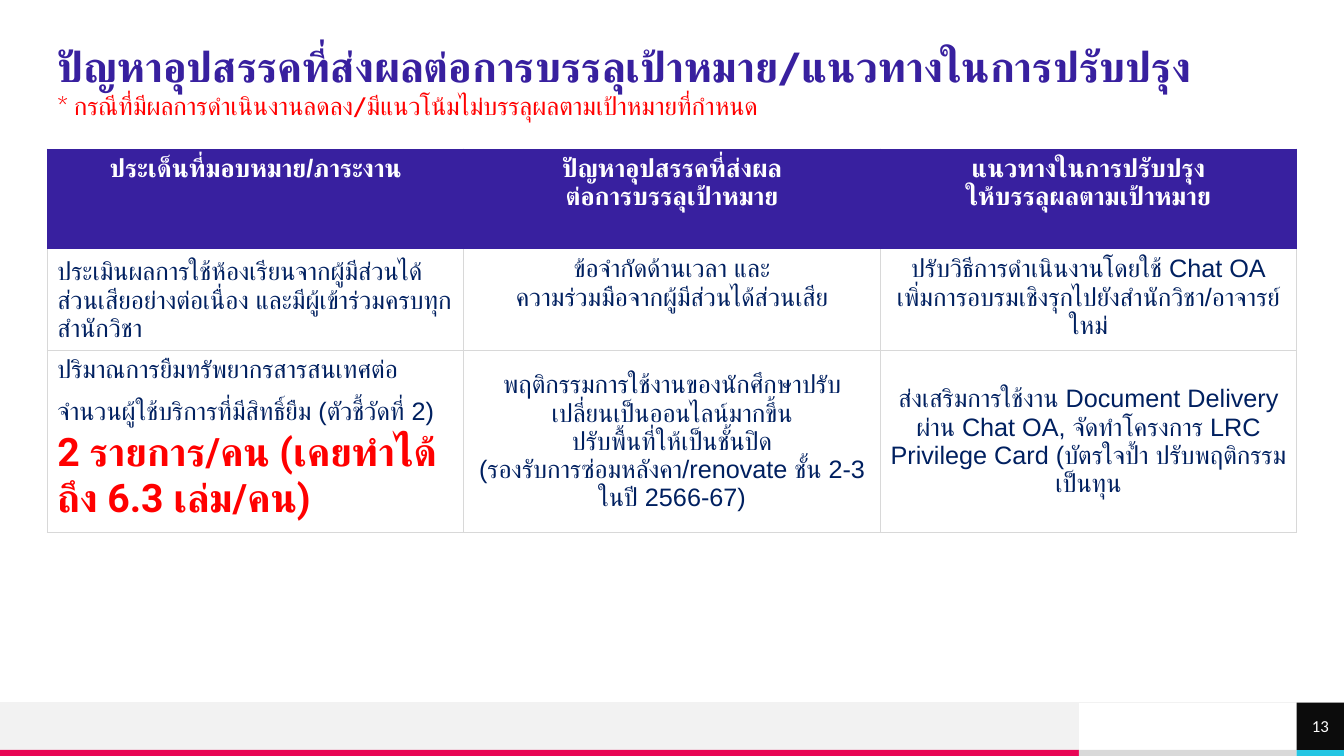
from pptx import Presentation
from pptx.dml.color import RGBColor
from pptx.enum.shapes import MSO_CONNECTOR, MSO_SHAPE
from pptx.enum.text import MSO_ANCHOR, PP_ALIGN
from pptx.oxml.ns import qn
from pptx.util import Inches, Pt
from lxml.etree import SubElement

COLORS = {
    "purple": "38209F", "navy": "002060", "red": "FF0000", "white": "FFFFFF",
    "border": "D8D8D8", "footer": "F2F2F2", "strip": "D9D9D9", "pink": "E80554",
    "cyan": "25C6E3", "black": "0C0C0C",
}
MARGIN, FOOTER_TOP, STRIP_TOP = 0.47, 6.97, 7.44
FOOTER_W, NUMBER_LEFT, SLIDE_W = 10.7, 12.86, 13.33

HEADERS = [
    ["ประเด็นที่มอบหมาย/ภาระงาน"],
    ["ปัญหาอุปสรรคที่ส่งผล", "ต่อการบรรลุเป้าหมาย"],
    ["แนวทางในการปรับปรุง", "ให้บรรลุผลตามเป้าหมาย"],
]
ROWS = [
    [
        ["ประเมินผลการใช้ห้องเรียนจากผู้มีส่วนได้ส่วนเสียอย่างต่อเนื่อง และมีผู้เข้าร่วมครบทุกสำนักวิชา"],
        ["ข้อจำกัดด้านเวลา และ", "ความร่วมมือจากผู้มีส่วนได้ส่วนเสีย"],
        ["ปรับวิธีการดำเนินงานโดยใช้ Chat OA", "เพิ่มการอบรมเชิงรุกไปยังสำนักวิชา/อาจารย์ใหม่"],
    ],
    [
        ["ปริมาณการยืมทรัพยากรสารสนเทศต่อจำนวนผู้ใช้บริการที่มีสิทธิ์ยืม (ตัวชี้วัดที่ 2)"],
        ["พฤติกรรมการใช้งานของนักศึกษาปรับเปลี่ยนเป็นออนไลน์มากขึ้น", "ปรับพื้นที่ให้เป็นชั้นปิด",
         "(รองรับการซ่อมหลังคา/renovate ชั้น 2-3 ในปี 2566-67)"],
        ["ส่งเสริมการใช้งาน Document Delivery ผ่าน Chat OA, จัดทำโครงการ LRC Privilege Card "
         "(บัตรใจป้ำ ปรับพฤติกรรมเป็นทุน"],
    ],
]
LOAN_RESULT = " 2 รายการ/คน (เคยทำได้ถึง 6.3 เล่ม/คน)"
TOP_ANCHORED = {(1, 1), (1, 2), (2, 0)}
ROW_SIDES = ["LRTB", "LRB", "LRTB"]


def rgb(name):
    return RGBColor.from_string(COLORS[name])


def add_run(p, text, size=18, font="Arial", color="navy", bold=False):
    """Add a run with the same font for Latin and Thai script."""
    r = p.add_run()
    r.text = text
    r.font.size = Pt(size)
    r.font.name = font
    r.font.bold = bold
    r.font.color.rgb = rgb(color)
    SubElement(r.font._element, qn("a:cs"), typeface=font)


def set_borders(cell, sides, color):
    for side in sides:
        ln = SubElement(cell._tc.get_or_add_tcPr(), qn(f"a:ln{side}"), w=str(Pt(1)))
        fill = SubElement(ln, qn("a:solidFill"))
        SubElement(fill, qn("a:srgbClr"), val=COLORS[color])


class SlideBuilder:
    def __init__(self, prs):
        self.slide = prs.slides.add_slide(prs.slide_layouts[5])
        self.shapes = self.slide.shapes

    def rect(self, left, top, width, height, color):
        sp = self.shapes.add_shape(MSO_SHAPE.RECTANGLE, Inches(left), Inches(top),
                                   Inches(width), Inches(height))
        sp.shadow.inherit = False
        sp.fill.solid()
        sp.fill.fore_color.rgb = rgb(color)
        sp.line.fill.background()
        return sp

    def rule(self, top, color):
        line = self.shapes.add_connector(MSO_CONNECTOR.STRAIGHT, 0, Inches(top),
                                         Inches(SLIDE_W), Inches(top))
        line.line.color.rgb = rgb(color)
        line.line.width = Pt(0.75)
        SubElement(line._element.spPr, qn("a:effectLst"))

    def title(self, heading, note):
        sp = self.shapes.title
        sp.left, sp.top, sp.width, sp.height = map(Inches, (MARGIN, 0.35, 12.23, 0.94))
        tf = sp.text_frame
        tf.word_wrap = True
        tf.vertical_anchor = MSO_ANCHOR.TOP
        add_run(tf.paragraphs[0], heading, 30, "Cabin", "purple", True)
        add_run(tf.add_paragraph(), note, 18, "Cabin", "red")
        for p in tf.paragraphs:
            p.alignment = PP_ALIGN.LEFT

    def page_number(self, number):
        side = STRIP_TOP - FOOTER_TOP
        tf = self.rect(NUMBER_LEFT, FOOTER_TOP, side, side, "black").text_frame
        tf.margin_left = tf.margin_right = tf.margin_top = tf.margin_bottom = 0
        tf.vertical_anchor = MSO_ANCHOR.MIDDLE
        p = tf.paragraphs[0]
        p.alignment = PP_ALIGN.CENTER
        add_run(p, number, 12, "Calibri", "white")

    def cell(self, cell, lines, align, anchor, sides, is_header):
        set_borders(cell, sides, "purple" if is_header else "border")
        cell.fill.solid()
        cell.fill.fore_color.rgb = rgb("purple" if is_header else "white")
        cell.vertical_anchor = anchor
        tf = cell.text_frame
        for i, line in enumerate(lines):
            p = tf.add_paragraph() if i else tf.paragraphs[0]
            p.alignment = align
            add_run(p, line, color="white" if is_header else "navy", bold=is_header)

    def table(self, rows, heights):
        width = NUMBER_LEFT - MARGIN
        table = self.shapes.add_table(len(rows), len(rows[0]), Inches(MARGIN), Inches(1.48),
                                      Inches(width), Inches(sum(heights))).table
        table.first_row = table.horz_banding = False
        for r, (row, height) in enumerate(zip(rows, heights)):
            table.rows[r].height = Inches(height)
            for c, lines in enumerate(row):
                is_header = r == 0
                align = PP_ALIGN.CENTER if is_header or c else PP_ALIGN.LEFT
                top = is_header or (r, c) in TOP_ANCHORED
                anchor = MSO_ANCHOR.TOP if top else MSO_ANCHOR.MIDDLE
                self.cell(table.cell(r, c), lines, align, anchor, ROW_SIDES[r], is_header)
        return table


def main():
    prs = Presentation()
    prs.slide_width, prs.slide_height = Inches(SLIDE_W), Inches(7.5)
    s = SlideBuilder(prs)

    s.rect(0, FOOTER_TOP, FOOTER_W, STRIP_TOP - FOOTER_TOP, "footer")
    stops = [0, FOOTER_W, NUMBER_LEFT, SLIDE_W]
    for left, right, color in zip(stops, stops[1:], ["pink", "strip", "cyan"]):
        s.rect(left, STRIP_TOP, right - left, 0.06, color)
    s.rule(FOOTER_TOP, "footer")

    table = s.table([HEADERS] + ROWS, [1.0, 1.0, 1.8])
    loans = table.cell(2, 0).text_frame.paragraphs[0]
    add_run(loans, LOAN_RESULT, 28, "Roboto", "red", True)

    s.page_number("13")
    s.title("ปัญหาอุปสรรคที่ส่งผลต่อการบรรลุเป้าหมาย/แนวทางในการปรับปรุง",
            "* กรณีที่มีผลการดำเนินงานลดลง/มีแนวโน้มไม่บรรลุผลตามเป้าหมายที่กำหนด")
    prs.save("out.pptx")


if __name__ == "__main__":
    main()
